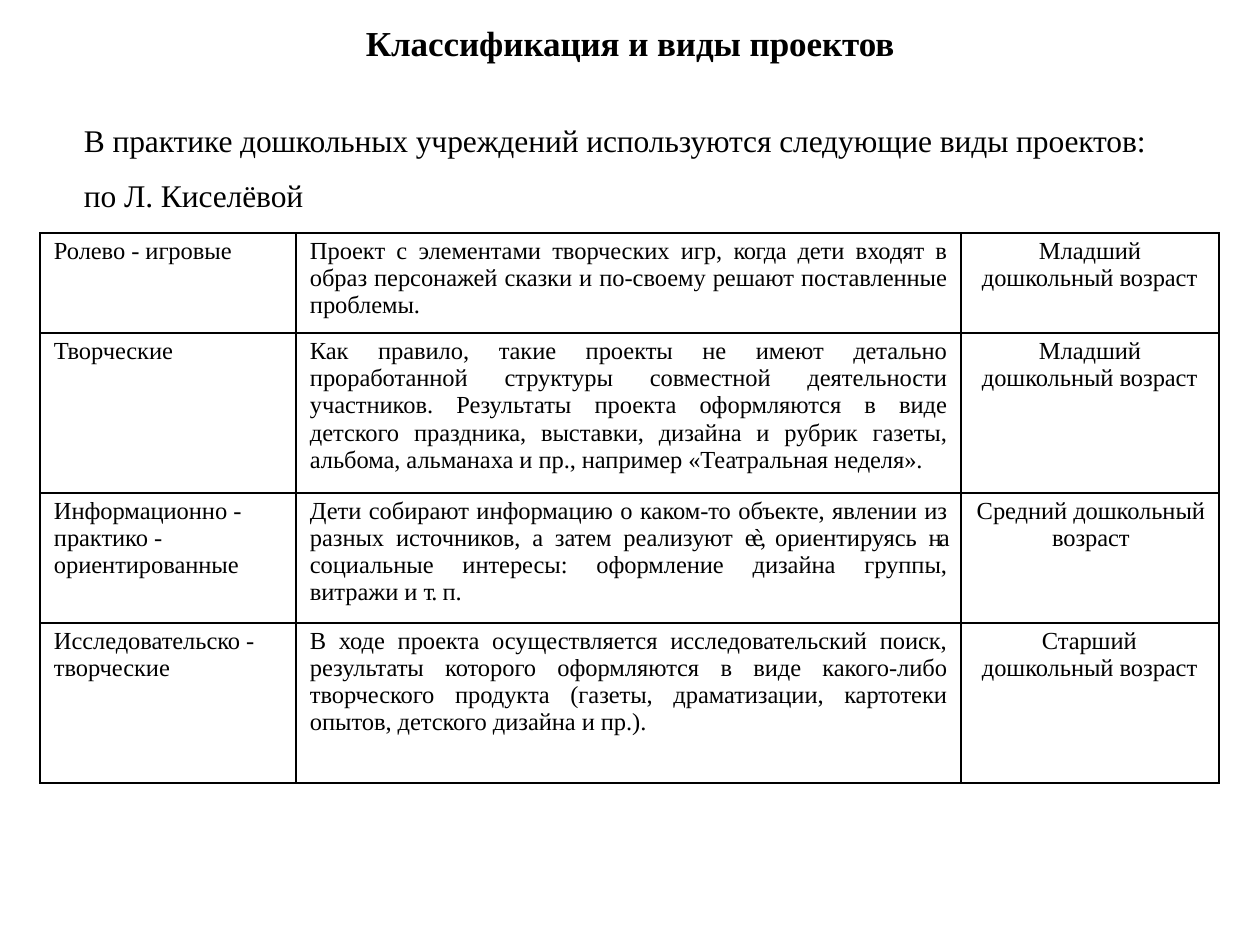
from dataclasses import dataclass

from lxml import etree
from pptx import Presentation
from pptx import util as u
from pptx.dml.color import RGBColor
from pptx.enum import text
from pptx.oxml import ns

PX = 914400 / 126


@dataclass(frozen=True)
class Theme:
    font: str = "Times New Roman"
    ink: str = "000000"
    title: int = 20
    intro: int = 18
    cell: int = 14
    line: int = 1
    tracking: int = -5


THEME = Theme()
LEFT, JUSTIFY, CENTER = text.PP_ALIGN.LEFT, text.PP_ALIGN.JUSTIFY, text.PP_ALIGN.CENTER
AGE = {"align": LEFT, "left": 21, "indent": 57}
AGE_CENTERED = {"align": CENTER, "left": 2}
NAME = {"align": LEFT, "left": 14}
DETAIL = {"align": JUSTIFY, "left": 14}

TITLE = "Классификация и виды проектов"
INTRO = [
    ["В практике дошкольных учреждений используются следующие виды проектов:"],
    ["по Л. Киселёвой"],
]
COLUMNS = [256, 665, 258]
ROWS = [
    (100, [["Ролево - игровые"]],
     [["Проект с элементами творческих игр, ", ("когда ", -30),
       "дети входят в образ персонажей сказки и по-своему решают "
       "поставленные проблемы."]],
     [["Младший дошкольный возраст"]], AGE),
    (160, [["Творческие"]],
     [["Как правило, такие проекты не имеют детально проработанной структуры "
       "совместной деятельности участников. Результаты проекта оформляются "
       "в виде детского праздника, выставки, дизайна и рубрик газеты, альбома, "
       "альманаха и пр., например «Театральная неделя»."]],
     [["Младший дошкольный возраст"]], AGE),
    (130, [["Информационно -"], ["практико -"], ["ориентированные"]],
     [["Дети собирают информацию о каком-то объекте, явлении из разных "
       "источников, а затем реализуют ", ("еѐ, ", -180), "ориентируясь ",
       ("на ", -160), "социальные интересы: оформление дизайна группы, "
       "витражи и ", ("т. ", -60), "п."]],
     [["Средний дошкольный"], ["возраст"]], AGE_CENTERED),
    (160, [["Исследовательско - творческие"]],
     [["В ходе проекта осуществляется исследовательский поиск, результаты "
       "которого оформляются в виде какого-либо творческого продукта (газеты, "
       "драматизации, картотеки опытов, детского дизайна и пр.)."]],
     [["Старший дошкольный возраст"]], AGE | {"indent": 60}),
]


def px(n):
    return u.Emu(round(n * PX))


def apply(target, values):
    for name, value in values.items():
        setattr(target, name, value)


def write(tf, paragraphs, size, align=LEFT, left=0, indent=0, gap=0, bold=False):
    for i, runs in enumerate(paragraphs):
        p = tf.paragraphs[0] if i == 0 else tf.add_paragraph()
        apply(p, {"alignment": align, "space_before": u.Pt(gap if i else 0)})
        pPr = p._p.get_or_add_pPr()
        pPr.set("marL", str(px(left)))
        pPr.set("indent", str(px(indent)))
        for item in runs:
            words, tracking = (item, THEME.tracking) if isinstance(item, str) else item
            r = p.add_run()
            r.text = words
            apply(r.font, {"name": THEME.font, "size": u.Pt(size), "bold": bold})
            r.font.color.rgb = RGBColor.from_string(THEME.ink)
            r._r.get_or_add_rPr().set("spc", str(tracking))


def frame(sp, box, top):
    apply(sp, dict(zip(("left", "top", "width", "height"), map(px, box))))
    apply(sp.text_frame, {
        "word_wrap": True, "vertical_anchor": text.MSO_ANCHOR.TOP,
        "auto_size": text.MSO_AUTO_SIZE.NONE, "margin_left": 0,
        "margin_right": 0, "margin_top": px(top), "margin_bottom": 0,
    })
    return sp.text_frame


def add_title(s, box):
    tf = frame(s.shapes.title, box, 2)
    write(tf, [[TITLE]], THEME.title, align=CENTER, bold=True)


def add_intro(s, box):
    tf = frame(s.shapes.add_textbox(*map(px, box)), box, 18)
    write(tf, INTRO, THEME.intro, left=1, gap=9.8)


def add_borders(cell):
    tcPr = cell._tc.get_or_add_tcPr()
    for side in ("lnL", "lnR", "lnT", "lnB"):
        ln = etree.SubElement(tcPr, ns.qn(f"a:{side}"), w=str(u.Pt(THEME.line)))
        fill = etree.SubElement(ln, ns.qn("a:solidFill"))
        etree.SubElement(fill, ns.qn("a:srgbClr"), val=THEME.ink)


def fill_cell(cell, paragraphs, style, right):
    apply(cell, {"margin_left": 0, "margin_right": px(right),
                 "margin_top": px(5), "margin_bottom": 0})
    add_borders(cell)
    cell.fill.background()
    write(cell.text_frame, paragraphs, THEME.cell, **style)


def add_project_table(s, left, top):
    height = sum(row[0] for row in ROWS)
    size = map(px, (left, top, sum(COLUMNS), height))
    table = s.shapes.add_table(len(ROWS), len(COLUMNS), *size).table
    apply(table, {"first_row": False, "horz_banding": False})
    for column, width in zip(table.columns, COLUMNS):
        column.width = px(width)
    for row, (height, name, detail, age, age_style) in zip(table.rows, ROWS):
        row.height = px(height)
        parts = ((name, NAME, 0), (detail, DETAIL, 14), (age, age_style, 0))
        for cell, part in zip(row.cells, parts):
            fill_cell(cell, *part)


def main():
    prs = Presentation()
    apply(prs, {"slide_width": px(1260), "slide_height": px(945)})
    s = prs.slides.add_slide(prs.slide_layouts[5])
    add_title(s, (363, 19, 534, 45))
    add_project_table(s, 40, 233)
    add_intro(s, (83, 103, 1072, 111))
    prs.save("out.pptx")


if __name__ == "__main__":
    main()
